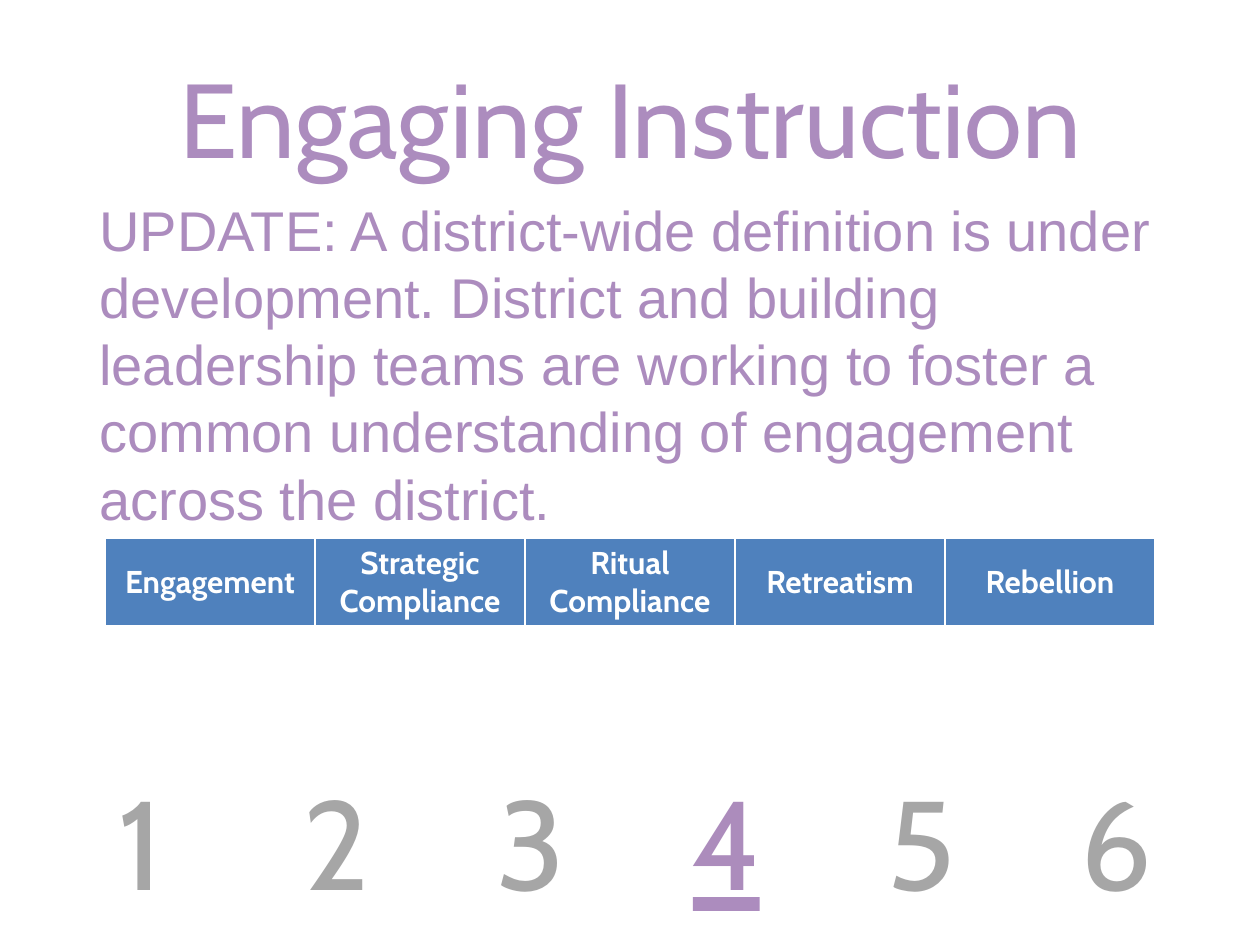
from dataclasses import dataclass

from pptx import Presentation
from pptx.dml.color import RGBColor
from pptx.enum.shapes import MSO_SHAPE
from pptx.enum.text import MSO_ANCHOR, MSO_AUTO_SIZE, PP_ALIGN
from pptx.util import Inches, Pt

CENTER, LEFT = PP_ALIGN.CENTER, PP_ALIGN.LEFT
TOP, MIDDLE = MSO_ANCHOR.TOP, MSO_ANCHOR.MIDDLE
RECTANGLE = MSO_SHAPE.RECTANGLE
FIT_SHAPE = MSO_AUTO_SIZE.SHAPE_TO_FIT_TEXT
TITLE_ONLY = 5

TITLE = "Engaging Instruction"
UPDATE = (
    "UPDATE: A district-wide definition is under development. "
    "District and building leadership teams are working to foster a "
    "common understanding of engagement across the district."
)
LEVELS = ["Engagement", "Strategic\nCompliance", "Ritual\nCompliance", "Retreatism", "Rebellion"]
STEPS = ["1", "2", "3", "4", "5", "6"]
CURRENT_STEP = "4"


@dataclass(frozen=True)
class Theme:
    accent: str = "AC8CBE"
    current: str = "AC8CBC"
    muted: str = "A6A6A6"
    cell: str = "4F81BD"
    white: str = "FFFFFF"
    heading_font: str = "Cabin"
    body_font: str = "Arial"
    title_size: int = 60
    body_size: int = 32
    cell_size: int = 18
    step_size: int = 72


THEME = Theme()
SLIDE_WIDTH, SLIDE_HEIGHT = 10, 7.5
TITLE_BOX = (0.5, 0.3, 9, 1.25)
UPDATE_BOX = (0.69, 1.5, 8.62, 1.73)
TABLE_BOX = (SLIDE_WIDTH / 12, 4.27, SLIDE_WIDTH * 5 / 6, 0.7)
STEP_LEFT, STEP_TOP, STEP_WIDTH, STEP_HEIGHT = 0.55, 6.02, 1.14, 1.31
LAST_STEP_LEFT = 8.29
STEP_PITCH = (LAST_STEP_LEFT - STEP_LEFT) / (len(STEPS) - 1)
BAR_TOP, BAR_WIDTH, BAR_HEIGHT = 7.12, 0.53, 0.11


def inches(box):
    return [Inches(length) for length in box]


def write_text(frame, text, *, size, color, font=THEME.heading_font, bold=False,
               align=CENTER, anchor=TOP):
    frame.word_wrap = True
    frame.vertical_anchor = anchor
    paragraph = frame.paragraphs[0]
    paragraph.text = text
    paragraph.alignment = align
    for run in paragraph.runs:
        run.font.name = font
        run.font.size = Pt(size)
        run.font.bold = bold
        run.font.color.rgb = RGBColor.from_string(color)


def add_title(slide):
    title = slide.shapes.title
    title.left, title.top, title.width, title.height = inches(TITLE_BOX)
    write_text(title.text_frame, TITLE, size=THEME.title_size, color=THEME.accent, anchor=MIDDLE)


def add_update(slide):
    frame = slide.shapes.add_textbox(*inches(UPDATE_BOX)).text_frame
    write_text(frame, UPDATE, size=THEME.body_size, color=THEME.accent,
               font=THEME.body_font, align=LEFT)


def add_level_table(slide):
    table = slide.shapes.add_table(1, len(LEVELS), *inches(TABLE_BOX)).table
    for cell, level in zip(table.rows[0].cells, LEVELS):
        cell.fill.solid()
        cell.fill.fore_color.rgb = RGBColor.from_string(THEME.cell)
        cell.margin_left = cell.margin_right = Inches(0.07)
        cell.margin_top = cell.margin_bottom = Inches(0.04)
        cell.vertical_anchor = MIDDLE
        write_text(cell.text_frame, level, size=THEME.cell_size, color=THEME.white,
                   bold=True, anchor=MIDDLE)


def add_steps(slide):
    for index, step in enumerate(STEPS):
        left = STEP_LEFT + index * STEP_PITCH
        frame = slide.shapes.add_textbox(
            *inches((left, STEP_TOP, STEP_WIDTH, STEP_HEIGHT))).text_frame
        is_current = step == CURRENT_STEP
        write_text(frame, step, size=THEME.step_size,
                   color=THEME.current if is_current else THEME.muted)
        frame.auto_size = FIT_SHAPE
        if is_current:
            add_bar(slide, left + (STEP_WIDTH - BAR_WIDTH) / 2)


def add_bar(slide, left):
    bar = slide.shapes.add_shape(RECTANGLE, *inches((left, BAR_TOP, BAR_WIDTH, BAR_HEIGHT)))
    bar.shadow.inherit = False
    bar.fill.solid()
    bar.fill.fore_color.rgb = RGBColor.from_string(THEME.accent)
    bar.line.fill.background()


def main():
    presentation = Presentation()
    presentation.slide_width = Inches(SLIDE_WIDTH)
    presentation.slide_height = Inches(SLIDE_HEIGHT)
    slide = presentation.slides.add_slide(presentation.slide_layouts[TITLE_ONLY])
    add_title(slide)
    add_update(slide)
    add_level_table(slide)
    add_steps(slide)
    presentation.save("out.pptx")


if __name__ == "__main__":
    main()
